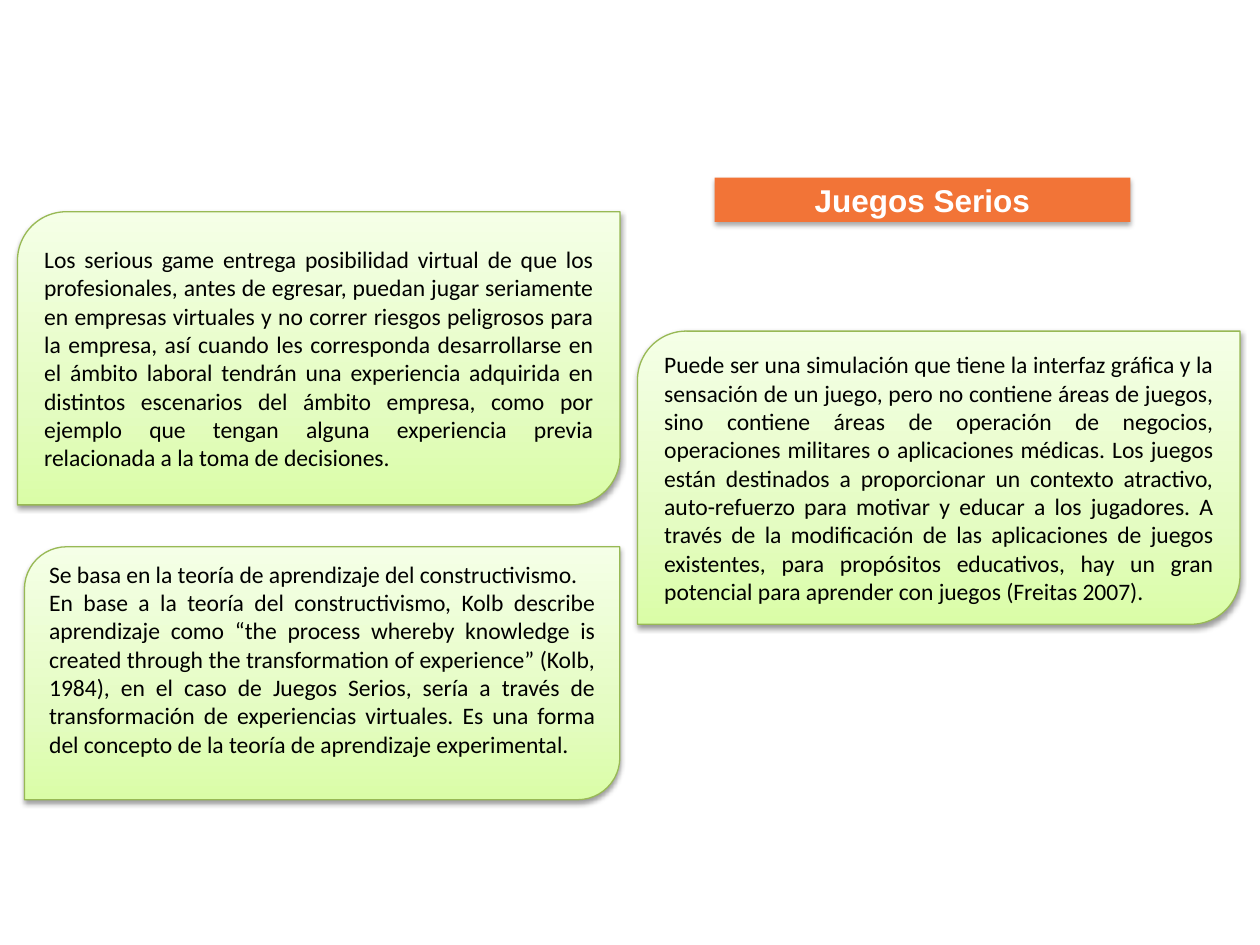
from copy import deepcopy
from dataclasses import dataclass

from lxml.etree import SubElement
from pptx import Presentation
from pptx.dml.color import RGBColor as Rgb
from pptx.enum.shapes import MSO_SHAPE as Kind
from pptx.enum.text import MSO_ANCHOR as Anchor, MSO_AUTO_SIZE as Auto, PP_ALIGN as Align
from pptx.oxml.ns import qn
from pptx.util import Pt


@dataclass(frozen=True)
class Theme:
    orange: str = "F27437"
    edge: str = "98B955"
    green: tuple = ((0, "DAFDA7"), (0.35, "E4FCC2"), (1, "F5FFE7"))
    white: str = "FFFFFF"
    black: str = "000000"
    head: float = 18
    body: float = 13.5


THEME = Theme()

GAME = (
    "Los serious game entrega posibilidad virtual de que los profesionales, antes de egresar, "
    "puedan jugar seriamente en empresas virtuales y no correr riesgos peligrosos para la empresa, "
    "así cuando les corresponda desarrollarse en el ámbito laboral tendrán una experiencia adquirida "
    "en distintos escenarios del ámbito empresa, como por ejemplo que tengan alguna experiencia "
    "previa relacionada a la toma de decisiones."
)
THEORY = (
    "Se basa en la teoría de aprendizaje del constructivismo.\n"
    "En base a la teoría del constructivismo, Kolb describe aprendizaje como “the process whereby "
    "knowledge is created through the transformation of experience” (Kolb, 1984), en el caso de "
    "Juegos Serios, sería a través de transformación de experiencias virtuales. Es una forma del "
    "concepto de la teoría de aprendizaje experimental."
)
USES = (
    "Puede ser una simulación que tiene la interfaz gráfica y la sensación de un juego, pero no "
    "contiene áreas de juegos, sino contiene áreas de operación de negocios, operaciones militares "
    "o aplicaciones médicas. Los juegos están destinados a proporcionar un contexto atractivo, "
    "auto-refuerzo para motivar y educar a los jugadores. A través de la modificación de las "
    "aplicaciones de juegos existentes, para propósitos educativos, hay un gran potencial para "
    "aprender con juegos (Freitas 2007)."
)


def shade(shape, dist, alpha):
    """Cast a soft shadow straight down; alpha is a percentage."""
    shape.shadow.inherit = False
    effects = shape._element.spPr.find(qn("a:effectLst"))
    outer = SubElement(effects, qn("a:outerShdw"), blurRad=str(Pt(3.1)),
                       dist=str(Pt(dist)), dir="5400000", rotWithShape="0")
    color = SubElement(outer, qn("a:srgbClr"), val=THEME.black)
    SubElement(color, qn("a:alpha"), val=str(alpha * 1000))


def blend(shape, stops):
    """Fill with a gradient that runs from bottom to top."""
    fill = shape.fill
    fill.gradient()
    fill.gradient_angle = 90
    items = shape._element.spPr.find(qn("a:gradFill")).find(qn("a:gsLst"))
    while len(items) < len(stops):
        items.append(deepcopy(items[0]))
    for stop, (place, color) in zip(fill.gradient_stops, stops):
        stop.position = place
        stop.color.rgb = Rgb.from_string(color)


def write(shape, text, font, size, color, align, bold=False):
    frame = shape.text_frame
    frame.text = text
    frame.word_wrap = True
    frame.auto_size = Auto.NONE
    frame.vertical_anchor = Anchor.MIDDLE
    for para in frame.paragraphs:
        para.alignment = align
        for run in para.runs:
            run.font.name = font
            run.font.size = Pt(size)
            run.font.bold = bold
            run.font.color.rgb = Rgb.from_string(color)


def add_title(slide, text):
    title = slide.shapes.title
    title.left, title.top, title.width, title.height = map(Pt, (408.3, 101.5, 237.6, 25.3))
    title.fill.solid()
    title.fill.fore_color.rgb = Rgb.from_string(THEME.orange)
    shade(title, 1.8, 35)
    write(title, text, "Arial", THEME.head, THEME.white, Align.CENTER, True)
    frame = title.text_frame
    frame.margin_left = frame.margin_right = Pt(5)
    frame.margin_top = frame.margin_bottom = Pt(2.9)


def add_card(slide, text, left, top, width=344.3, height=167.5, foot=3.6):
    """Add a green text card; foot is the space kept below its text."""
    card = slide.shapes.add_shape(Kind.ROUND_2_DIAG_RECTANGLE,
                                  *map(Pt, (left, top, width, height)))
    blend(card, THEME.green)
    card.line.color.rgb = Rgb.from_string(THEME.edge)
    card.line.width = Pt(0.75)
    shade(card, 1.6, 38)
    write(card, text, "Calibri", THEME.body, THEME.black, Align.JUSTIFY)
    card.text_frame.margin_bottom = Pt(foot)


def main():
    deck = Presentation()
    deck.slide_width, deck.slide_height = Pt(720), Pt(540)
    slide = deck.slides.add_slide(deck.slide_layouts[5])
    add_title(slide, "Juegos Serios")
    add_card(slide, THEORY, 14, 312.5, 340.2, 144.5, foot=20)
    add_card(slide, USES, 364.3, 189.2)
    add_card(slide, GAME, 10, 121)
    deck.save("out.pptx")


if __name__ == "__main__":
    main()
